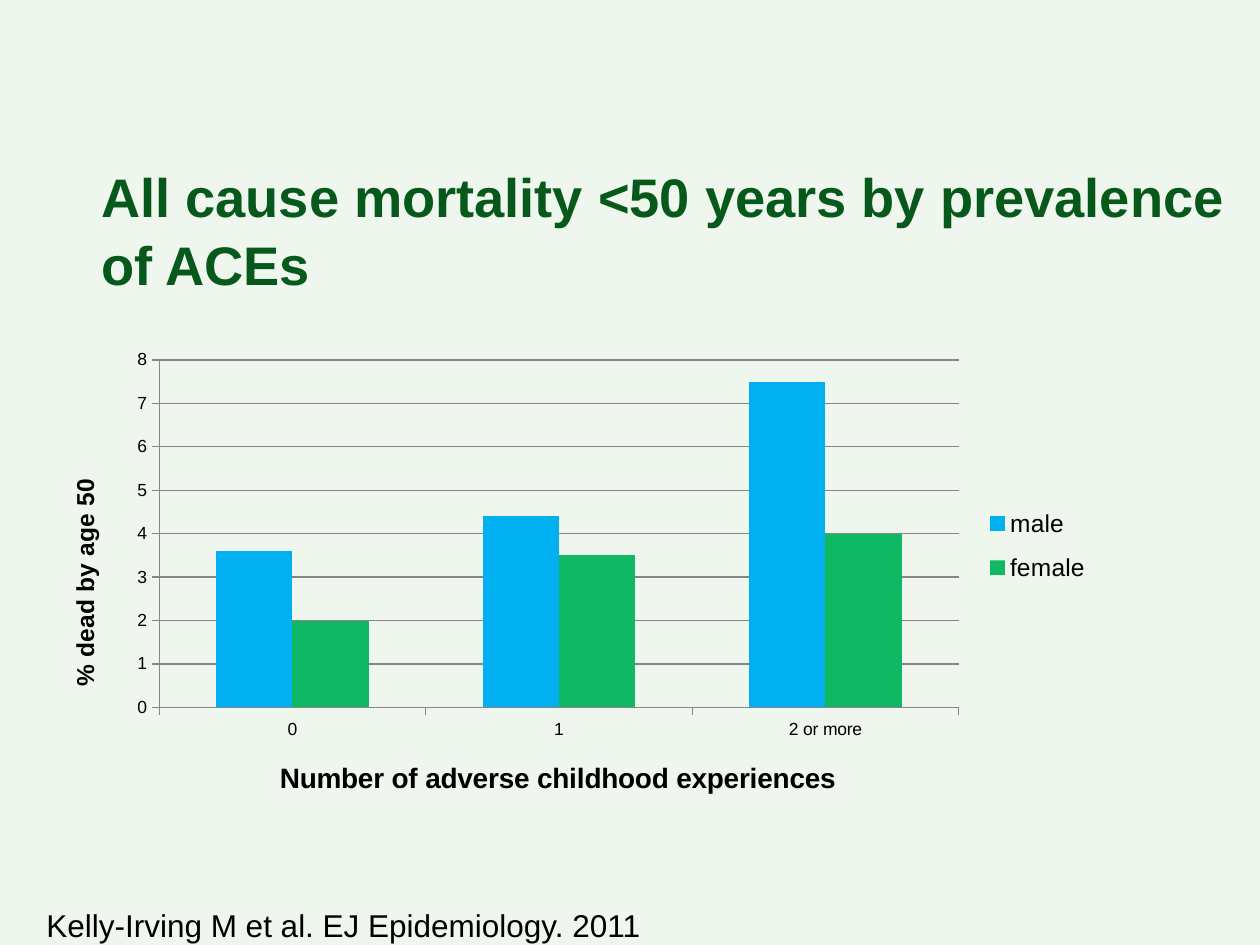
from dataclasses import dataclass

from pptx import Presentation
from pptx.chart.data import CategoryChartData
from pptx.dml.color import RGBColor
from pptx.enum.chart import XL_CHART_TYPE, XL_LEGEND_POSITION, XL_TICK_MARK
from pptx.enum.text import MSO_ANCHOR, MSO_AUTO_SIZE
from pptx.oxml import parse_xml
from pptx.oxml.ns import nsdecls, qn
from pptx.util import Pt

PX = 914400 // 126


@dataclass(frozen=True)
class Theme:
    font: str = "Arial"
    background: str = "EEF6ED"
    title: str = "07591B"
    text: str = "000000"
    axis: str = "868686"
    male: str = "00B0F0"
    female: str = "11B863"
    title_size: int = 31
    source_size: int = 18
    category_title_size: int = 16
    value_title_size: int = 14
    legend_size: int = 14
    tick_size: int = 10


THEME = Theme()


def px(*lengths):
    return [length * PX for length in lengths]


def style_font(font, size, color=THEME.text, bold=False):
    font.name = THEME.font
    font.size = Pt(size)
    font.bold = bold
    font.color.rgb = RGBColor.from_string(color)


def write_text(tf, text, spacing=None, **style):
    p = tf.paragraphs[0]
    if spacing:
        p.line_spacing = spacing
    r = p.add_run()
    r.text = text
    style_font(r.font, **style)


def add_text(s, box, text, wrap=True, **style):
    tf = s.shapes.add_textbox(*px(*box)).text_frame
    tf.word_wrap = wrap
    tf.auto_size = MSO_AUTO_SIZE.NONE if wrap else MSO_AUTO_SIZE.SHAPE_TO_FIT_TEXT
    tf.vertical_anchor = MSO_ANCHOR.TOP
    write_text(tf, text, **style)


def place(element, index, inner=False, **fractions):
    for old in element.findall(qn("c:layout")):
        element.remove(old)
    target = '<c:layoutTarget val="inner"/>' if inner else ""
    modes = "".join(f'<c:{k}Mode val="edge"/>' for k in "xy")
    values = "".join(f'<c:{k} val="{v}"/>' for k, v in fractions.items())
    layout = (
        f'<c:layout {nsdecls("c")}><c:manualLayout>'
        f"{target}{modes}{values}</c:manualLayout></c:layout>"
    )
    element.insert(index, parse_xml(layout))


def style_axis(axis, title, size, x, y):
    axis.major_tick_mark = XL_TICK_MARK.OUTSIDE
    axis.minor_tick_mark = XL_TICK_MARK.NONE
    style_line(axis.format.line)
    style_font(axis.tick_labels.font, THEME.tick_size)
    write_text(axis.axis_title.text_frame, title, size=size, bold=True)
    place(axis.axis_title._element, 1, x=x, y=y)


def style_line(line):
    line.color.rgb = RGBColor.from_string(THEME.axis)
    line.width = Pt(0.75)


def add_mortality_chart(s, box):
    data = CategoryChartData()
    data.categories = ["0", "1", "2 or more"]
    data.add_series("male", [3.6, 4.4, 7.5])
    data.add_series("female", [2, 3.5, 4])
    chart = s.shapes.add_chart(
        XL_CHART_TYPE.COLUMN_CLUSTERED, *px(*box), data
    ).chart
    chart.has_title = False
    style_font(chart.font, THEME.tick_size)

    plot = chart.plots[0]
    plot.gap_width = 150
    plot.overlap = 0
    plot.vary_by_categories = False
    for series, color in zip(plot.series, (THEME.male, THEME.female)):
        series.format.fill.solid()
        series.format.fill.fore_color.rgb = RGBColor.from_string(color)

    style_axis(chart.category_axis, "Number of adverse childhood experiences",
               THEME.category_title_size, 0.21, 0.87)
    axis = chart.value_axis
    style_axis(axis, "% dead by age 50", THEME.value_title_size, 0.01, 0.28)
    axis.minimum_scale, axis.maximum_scale, axis.major_unit = 0, 8, 1
    axis.has_major_gridlines = True
    style_line(axis.major_gridlines.format.line)

    chart.has_legend = True
    legend = chart.legend
    legend.position = XL_LEGEND_POSITION.RIGHT
    legend.include_in_layout = False
    style_font(legend.font, THEME.legend_size)
    place(legend._element, 1, x=0.88, y=0.32, w=0.11, h=0.22)
    place(chart._chartSpace.chart.plotArea, 0, inner=True,
          x=0.1, y=0.04, w=0.76, h=0.73)


def main():
    prs = Presentation()
    prs.slide_width, prs.slide_height = px(1260, 945)
    s = prs.slides.add_slide(prs.slide_layouts[6])
    s.background.fill.solid()
    s.background.fill.fore_color.rgb = RGBColor.from_string(THEME.background)
    add_mortality_chart(s, (54, 341, 1052, 476))
    add_text(s, (89, 154, 1171, 189),
             "All cause mortality <50 years by prevalence of ACEs",
             size=THEME.title_size, color=THEME.title, bold=True, spacing=1.05)
    add_text(s, (34, 900, 625, 50),
             "Kelly-Irving M et al. EJ Epidemiology. 2011",
             wrap=False, size=THEME.source_size)
    prs.save("out.pptx")


if __name__ == "__main__":
    main()
